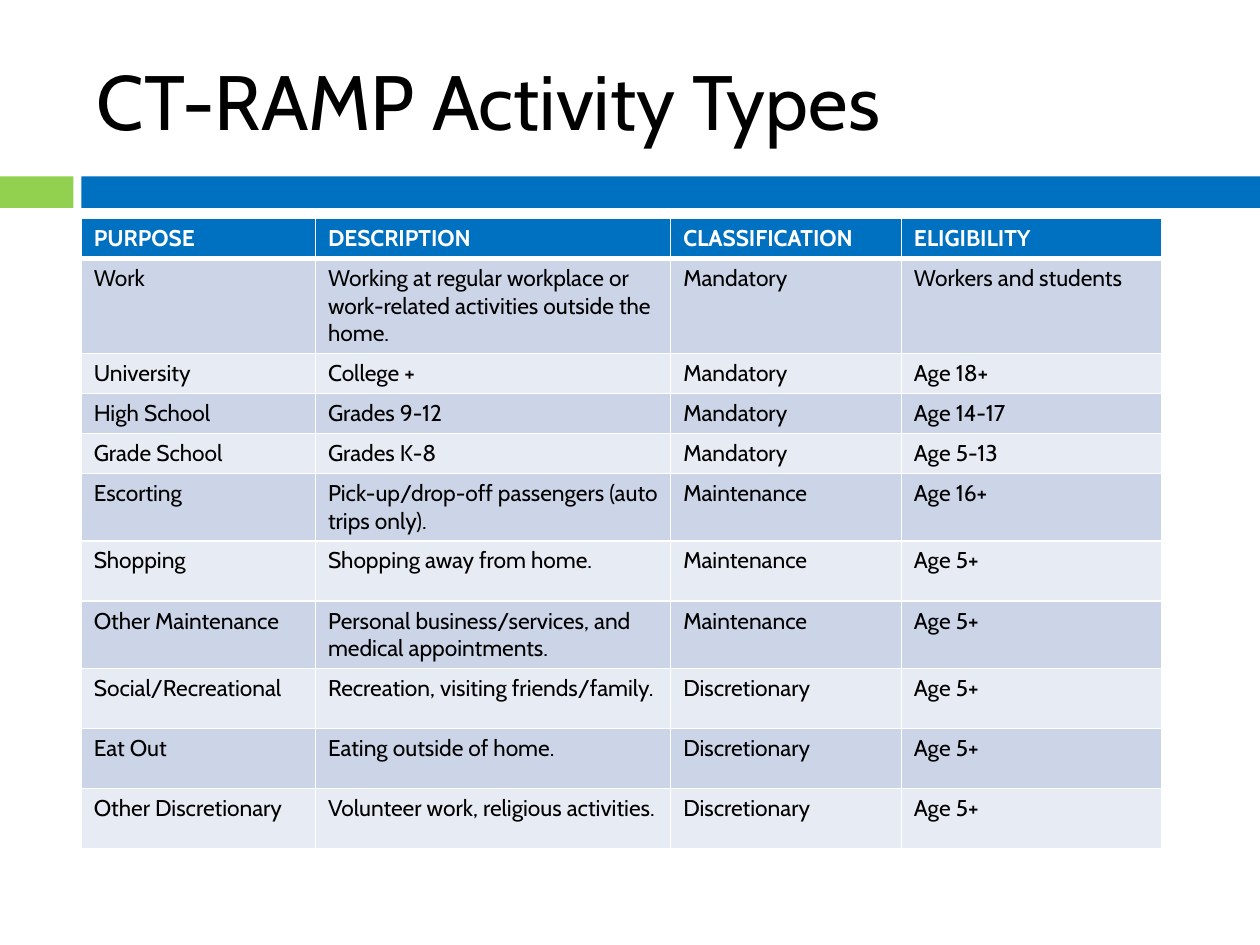
from dataclasses import dataclass

from lxml import etree
from pptx import Presentation
from pptx.dml.color import RGBColor
from pptx.enum import shapes, text
from pptx.oxml import ns
from pptx.util import Pt


@dataclass(frozen=True)
class Theme:
    font: str = "Cabin"
    title_size: float = 44
    table_size: float = 13
    black: str = "000000"
    white: str = "FFFFFF"
    blue: str = "0070C0"
    green: str = "92D050"
    bands: tuple = ("CCD5E8", "E7EBF4")


THEME = Theme()
THIN, THICK = 1, 3

COLUMN_WIDTHS = (133.9, 203, 131.8, 149)
HEADER = ("PURPOSE", "DESCRIPTION", "CLASSIFICATION", "ELIGIBILITY")
HEADER_HEIGHT = 22.3
ONE_LINE, ROOMY, TWO_LINES, THREE_LINES = 22.9, 34.3, 38.5, 54.3
ACTIVITIES = (
    (THREE_LINES, "Work",
     "Working at regular workplace or work-related activities outside the home.",
     "Mandatory", "Workers and students"),
    (ONE_LINE, "University", "College +", "Mandatory", "Age 18+"),
    (ONE_LINE, "High School", "Grades 9-12", "Mandatory", "Age 14-17"),
    (ONE_LINE, "Grade School", "Grades K-8", "Mandatory", "Age 5-13"),
    (TWO_LINES, "Escorting", "Pick-up/drop-off passengers (auto trips only).",
     "Maintenance", "Age 16+"),
    (ROOMY, "Shopping", "Shopping away from home.", "Maintenance", "Age 5+"),
    (TWO_LINES, "Other Maintenance",
     "Personal business/services, and medical appointments.",
     "Maintenance", "Age 5+"),
    (ROOMY, "Social/Recreational", "Recreation, visiting friends/family.",
     "Discretionary", "Age 5+"),
    (ROOMY, "Eat Out", "Eating outside of home.", "Discretionary", "Age 5+"),
    (ROOMY, "Other Discretionary", "Volunteer work, religious activities.",
     "Discretionary", "Age 5+"),
)


def rgb(color):
    return RGBColor.from_string(color)


def set_font(p, size, color, bold=False):
    p.font.name = THEME.font
    p.font.size = Pt(size)
    p.font.bold = bold
    p.font.color.rgb = rgb(color)


def add_bar(slide, left, width, color):
    sp = slide.shapes.add_shape(shapes.MSO_SHAPE.RECTANGLE,
                                Pt(left), Pt(100.8), Pt(width), Pt(18))
    sp.shadow.inherit = False
    sp.fill.solid()
    sp.fill.fore_color.rgb = rgb(color)
    sp.line.fill.background()


def add_title(slide, title):
    sp = slide.shapes.add_textbox(Pt(48.2), Pt(18), Pt(588.2), Pt(77.8))
    tf = sp.text_frame
    tf.word_wrap = True
    tf.vertical_anchor = text.MSO_ANCHOR.MIDDLE
    p = tf.paragraphs[0]
    p.text = title
    set_font(p, THEME.title_size, THEME.black)


def set_borders(cell, top, bottom):
    """Draw white edges; the fill must follow them in the cell's XML."""
    props = cell._tc.get_or_add_tcPr()
    for edge, width in (("L", THIN), ("R", THIN), ("T", top), ("B", bottom)):
        ln = etree.SubElement(props, ns.qn(f"a:ln{edge}"), w=str(Pt(width)))
        fill = etree.SubElement(ln, ns.qn("a:solidFill"))
        etree.SubElement(fill, ns.qn("a:srgbClr"), val=THEME.white)


def fill_row(table, index, height, labels, fill, color, bold=False,
             top=THIN, bottom=THIN):
    table.rows[index].height = Pt(height)
    for cell, label in zip(table.rows[index].cells, labels):
        cell.text = label
        set_font(cell.text_frame.paragraphs[0], THEME.table_size, color, bold)
        set_borders(cell, top, bottom)
        cell.fill.solid()
        cell.fill.fore_color.rgb = rgb(fill)


def add_activity_table(slide):
    height = HEADER_HEIGHT + sum(row[0] for row in ACTIVITIES)
    table = slide.shapes.add_table(
        len(ACTIVITIES) + 1, len(HEADER), Pt(46.4), Pt(124.8),
        Pt(sum(COLUMN_WIDTHS)), Pt(height)).table
    for column, width in zip(table.columns, COLUMN_WIDTHS):
        column.width = Pt(width)
    fill_row(table, 0, HEADER_HEIGHT, HEADER, THEME.blue, THEME.white,
             bold=True, bottom=THICK)
    for i, (row_height, *labels) in enumerate(ACTIVITIES):
        fill_row(table, i + 1, row_height, labels, THEME.bands[i % 2],
                 THEME.black, top=THIN if i else THICK)


def main():
    prs = Presentation()
    prs.slide_width, prs.slide_height = Pt(720), Pt(540)
    slide = prs.slides.add_slide(prs.slide_layouts[6])
    add_bar(slide, 0, 42, THEME.green)
    add_bar(slide, 46.5, 673.5, THEME.blue)
    add_title(slide, "CT-RAMP Activity Types")
    add_activity_table(slide)
    prs.save("out.pptx")


if __name__ == "__main__":
    main()
